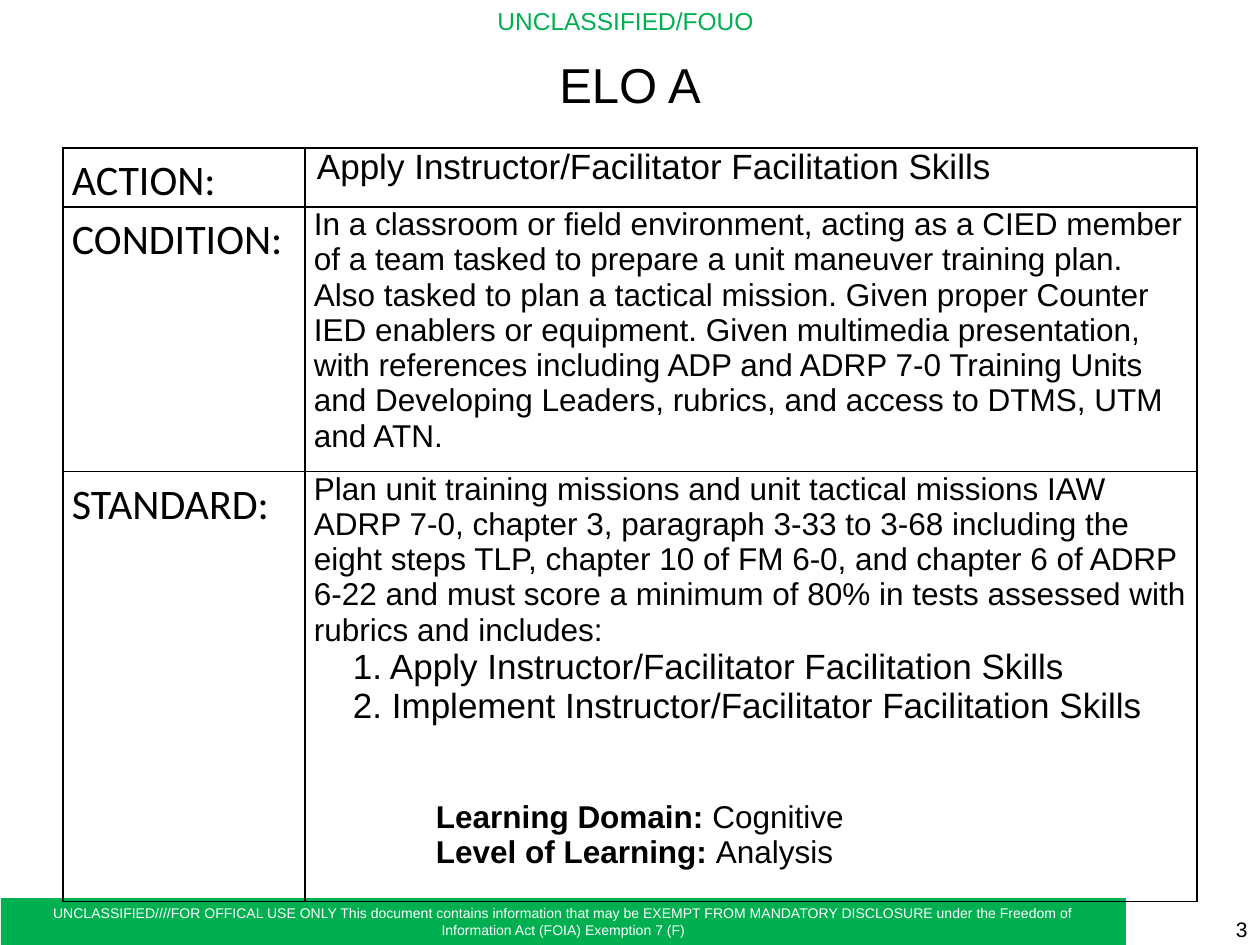
from dataclasses import dataclass
from typing import Any

from lxml.etree import SubElement
from pptx import Presentation
from pptx.dml.color import RGBColor
from pptx.enum.shapes import MSO_SHAPE
from pptx.enum.text import MSO_ANCHOR, PP_ALIGN
from pptx.oxml.ns import qn
from pptx.util import Emu, Pt

EMU_PER_PX = 914400 / 126


def px(length):
    return Emu(round(length * EMU_PER_PX))


def color(hex_value):
    return RGBColor.from_string(hex_value)


@dataclass
class Line:
    """One paragraph: text runs (every other one bold when there are several)."""
    runs: tuple
    size: int = 18
    indent: int = 0
    before: int = 0


@dataclass
class LessonSlide:
    slide: Any
    font: str = "Arial"
    label_font: str = "Calibri"
    ink: str = "000000"
    green: str = "00B050"
    white: str = "FFFFFF"

    def style(self, paragraph, size, ink=None, font=None, align=PP_ALIGN.LEFT):
        paragraph.alignment = align
        paragraph.font.name = font or self.font
        paragraph.font.size = Pt(size)
        paragraph.font.color.rgb = color(ink or self.ink)

    def title(self, text, *box):
        heading = self.slide.shapes.title
        heading.left, heading.top, heading.width, heading.height = map(px, box)
        heading.text_frame.text = text
        heading.text_frame.vertical_anchor = MSO_ANCHOR.MIDDLE
        self.style(heading.text_frame.paragraphs[0], 28, align=PP_ALIGN.CENTER)

    def text(self, text, *box, size, ink=None, align=PP_ALIGN.LEFT,
             anchor=MSO_ANCHOR.TOP, wrap=True):
        frame = self.slide.shapes.add_textbox(*map(px, box)).text_frame
        frame.text = text
        frame.word_wrap = wrap
        frame.vertical_anchor = anchor
        self.style(frame.paragraphs[0], size, ink, align=align)

    def banner(self, text, *box, size, margin):
        bar = self.slide.shapes.add_shape(MSO_SHAPE.RECTANGLE, *map(px, box))
        bar.shadow.inherit = False
        bar.fill.solid()
        bar.fill.fore_color.rgb = color(self.green)
        bar.line.fill.background()
        frame = bar.text_frame
        frame.word_wrap = True
        frame.margin_left = frame.margin_right = px(margin)
        frame.text = text
        self.style(frame.paragraphs[0], size, self.white, align=PP_ALIGN.CENTER)

    def table(self, rows, left, top, widths, heights):
        grid = self.slide.shapes.add_table(
            len(rows), len(widths), px(left), px(top),
            px(sum(widths)), px(sum(heights))).table
        grid.first_row = grid.horz_banding = False
        for column, width in zip(grid.columns, widths):
            column.width = px(width)
        for row, height, (label, lines) in zip(grid.rows, heights, rows):
            row.height = px(height)
            label_cell, content_cell = row.cells
            self.label(label_cell, label)
            self.content(content_cell, lines)

    def cell(self, cell):
        cell.margin_left = cell.margin_right = px(9)
        cell.margin_top = cell.margin_bottom = 0
        properties = cell._tc.get_or_add_tcPr()
        for side in ("a:lnL", "a:lnR", "a:lnT", "a:lnB"):
            border = SubElement(properties, qn(side), w=str(Pt(1)))
            fill = SubElement(border, qn("a:solidFill"))
            SubElement(fill, qn("a:srgbClr"), val=self.ink)
        cell.fill.background()

    def label(self, cell, text):
        self.cell(cell)
        cell.text = text
        paragraph = cell.text_frame.paragraphs[0]
        paragraph.line_spacing = 1.15
        self.style(paragraph, 24, font=self.label_font)

    def content(self, cell, lines):
        self.cell(cell)
        frame = cell.text_frame
        for number, line in enumerate(lines):
            paragraph = frame.add_paragraph() if number else frame.paragraphs[0]
            if line.indent:
                paragraph._p.get_or_add_pPr().set("marL", str(px(line.indent)))
            if line.before:
                paragraph.space_before = Pt(line.before)
            self.style(paragraph, line.size)
            for position, text in enumerate(line.runs):
                run = paragraph.add_run()
                run.text = text
                if len(line.runs) > 1:
                    run.font.bold = position % 2 == 0


SKILL = "Apply Instructor/Facilitator Facilitation Skills"
CONDITION = (
    "In a classroom or field environment, acting as a CIED member of a team "
    "tasked to prepare a unit maneuver training plan. Also tasked to plan a "
    "tactical mission. Given proper Counter IED enablers or equipment. Given "
    "multimedia presentation, with references including ADP and ADRP 7-0 "
    "Training Units and Developing Leaders, rubrics, and access to DTMS, UTM "
    "and ATN.")
STANDARD = (
    "Plan unit training missions and unit tactical missions IAW ADRP 7-0, "
    "chapter 3, paragraph 3-33 to 3-68 including the eight steps TLP, chapter "
    "10 of FM 6-0, and chapter 6 of ADRP 6-22 and must score a minimum of 80% "
    "in tests assessed with rubrics and includes:")
NOTICE = (
    "UNCLASSIFIED////FOR OFFICAL USE ONLY This document contains information "
    "that may be EXEMPT FROM MANDATORY DISCLOSURE under the Freedom of "
    "Information Act (FOIA) Exemption 7 (F)")

OBJECTIVE = [
    ("ACTION:", [Line((SKILL,), size=20, indent=3)]),
    ("CONDITION:", [Line((CONDITION,))]),
    ("STANDARD:", [
        Line((STANDARD,)),
        Line(("1. " + SKILL,), size=20, indent=39),
        Line(("2. Implement Instructor/Facilitator Facilitation Skills",),
             size=20, indent=39),
        Line(("Learning Domain: ", "Cognitive"), indent=122, before=42),
        Line(("Level of Learning: ", "Analysis"), indent=122),
    ]),
]


def main():
    deck = Presentation()
    deck.slide_width, deck.slide_height = px(1260), px(945)
    page = LessonSlide(deck.slides.add_slide(deck.slide_layouts[5]))

    # Classification marking and disclosure notice
    page.text("UNCLASSIFIED/FOUO", 485, 0, 289, 43, size=14, ink=page.green,
              wrap=False)
    page.banner(NOTICE, 1, 898, 1125, 47, size=8, margin=20)

    # Title and page number
    page.title("ELO A", 63, 38, 1134, 91)
    page.text("3", 966, 914, 294, 31, size=12, align=PP_ALIGN.RIGHT,
              anchor=MSO_ANCHOR.MIDDLE)

    # Learning objective
    page.table(OBJECTIVE, 63, 148, widths=(242, 892), heights=(59, 247, 430))

    deck.save("out.pptx")


if __name__ == "__main__":
    main()
